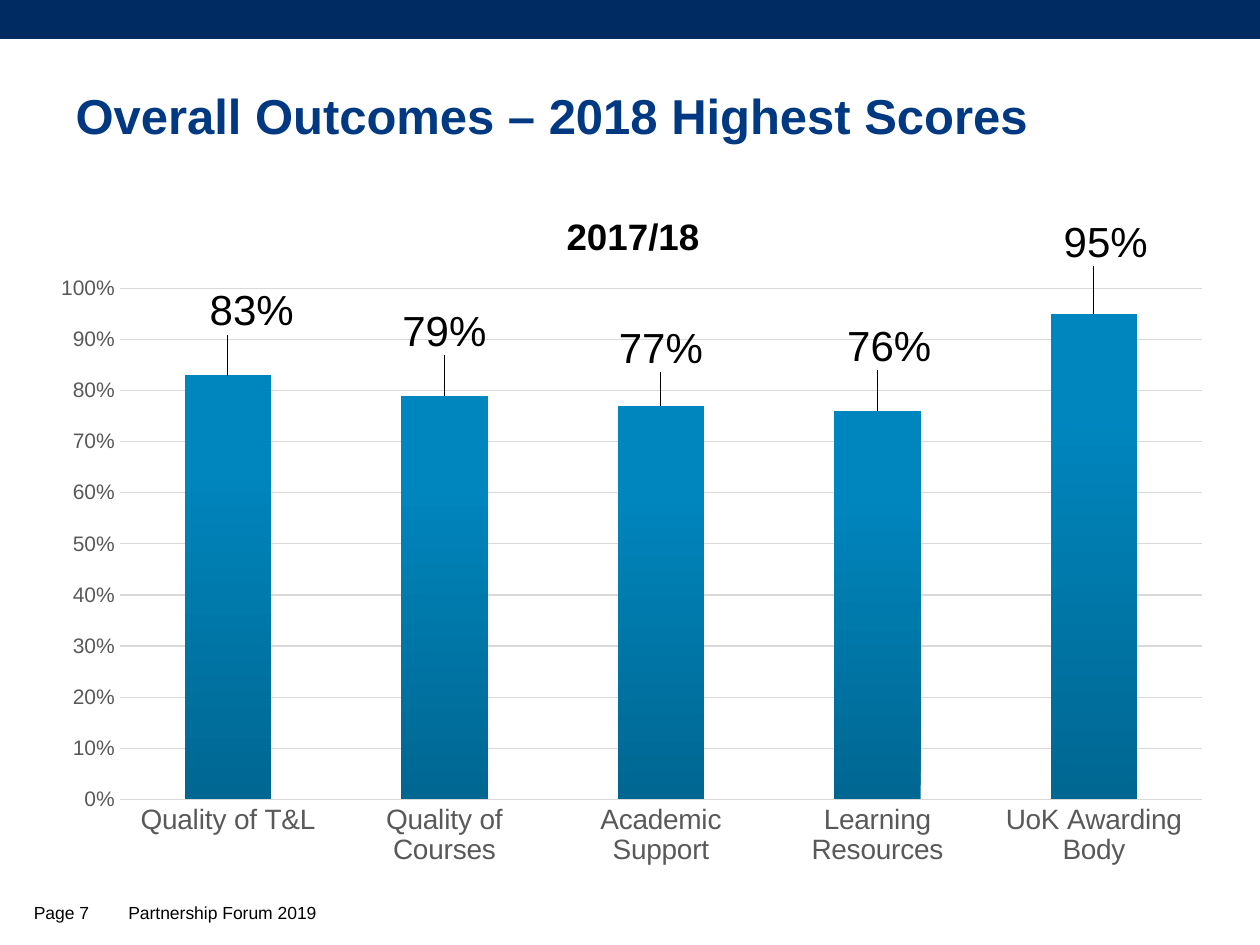
from typing import NamedTuple

from pptx import Presentation
from pptx.chart.data import CategoryChartData
from pptx.dml.color import RGBColor
from pptx.enum import chart as ch, shapes, text
from pptx.oxml import parse_xml
from pptx.oxml.ns import nsdecls
from pptx.util import Inches, Pt

NAVY = RGBColor(0x00, 0x2A, 0x62)
BLUE = RGBColor(0x00, 0x38, 0x82)
DEEP = RGBColor(0x00, 0x67, 0x92)
SKY = RGBColor(0x00, 0x86, 0xBE)
GRAY = RGBColor(0x59, 0x59, 0x59)
PALE = RGBColor(0xD9, 0xD9, 0xD9)
BLACK = RGBColor(0, 0, 0)
FACE = "Arial"


class Score(NamedTuple):
    name: str
    value: float
    dx: float  # label shift, as a share of the chart's width
    dy: float  # label shift, as a share of the chart's height


class Note(NamedTuple):
    words: str
    left: float
    top: float
    width: float
    height: float
    anchor: text.MSO_ANCHOR


SCORES = [
    Score("Quality of T&L", 0.83, 0.02, -0.05),
    Score("Quality of Courses", 0.79, 0, -0.05),
    Score("Academic Support", 0.77, 0, -0.04),
    Score("Learning Resources", 0.76, 0.01, -0.05),
    Score("UoK Awarding Body", 0.95, 0.01, -0.06),
]
NOTES = [
    Note("Partnership Forum 2019", 0.92, 7.11, 6.62, 0.3, text.MSO_ANCHOR.TOP),
    Note("Page 7", 0.17, 7.1, 0.74, 0.29, text.MSO_ANCHOR.MIDDLE),
]


def style(font, size: float, color: RGBColor, bold: bool = False) -> None:
    font.name = FACE
    font.size = Pt(size)
    font.bold = bold
    font.color.rgb = color


def layout(**parts):
    """Make a manual chart layout from its named parts."""
    body = "".join(f'<c:{key} val="{val}"/>' for key, val in parts.items())
    return parse_xml(f'<c:layout {nsdecls("c")}><c:manualLayout>{body}'
                     "</c:manualLayout></c:layout>")


def add_band(slide) -> None:
    band = slide.shapes.add_shape(shapes.MSO_SHAPE.RECTANGLE, 0, 0,
                                  Inches(10), Inches(0.31))
    band.shadow.inherit = False
    band.fill.solid()
    band.fill.fore_color.rgb = NAVY
    band.line.fill.background()


def add_title(slide) -> None:
    title = slide.shapes.title
    title.left, title.top = Inches(0.5), Inches(0.6)
    title.width, title.height = Inches(9.07), Inches(0.63)
    frame = title.text_frame
    frame.vertical_anchor = text.MSO_ANCHOR.MIDDLE
    para = frame.paragraphs[0]
    para.alignment = text.PP_ALIGN.LEFT
    run = para.add_run()
    run.text = "Overall Outcomes – 2018 Highest Scores"
    style(run.font, 28, BLUE, True)


def add_note(slide, note: Note) -> None:
    box = slide.shapes.add_textbox(Inches(note.left), Inches(note.top),
                                   Inches(note.width), Inches(note.height))
    frame = box.text_frame
    frame.word_wrap = True
    frame.vertical_anchor = note.anchor
    run = frame.paragraphs[0].add_run()
    run.text = note.words
    style(run.font, 10, BLACK)


def style_axes(chart) -> None:
    cat, val = chart.category_axis, chart.value_axis
    for axis, size in ((cat, 16), (val, 12)):
        axis.major_tick_mark = axis.minor_tick_mark = ch.XL_TICK_MARK.NONE
        style(axis.tick_labels.font, size, GRAY)
    cat.format.line.color.rgb = PALE
    cat.format.line.width = Pt(1)
    val.format.line.fill.background()
    val.minimum_scale, val.maximum_scale, val.major_unit = 0, 1, 0.1
    val.tick_labels.number_format = "0%"
    val.tick_labels.number_format_is_linked = False
    grid = val.major_gridlines.format.line
    grid.color.rgb = PALE
    grid.width = Pt(0.75)


def style_bars(plot) -> None:
    plot.gap_width = 150
    plot.vary_by_categories = False
    bars = plot.series[0]
    fill = bars.format.fill
    fill.gradient()
    fill.gradient_angle = 90
    for stop, color, place in zip(fill.gradient_stops, (DEEP, SKY), (0, 0.8)):
        stop.color.rgb = color
        stop.position = place

    tags = bars.data_labels
    tags.show_value = True
    tags.number_format = "0%"
    tags.number_format_is_linked = False
    style(tags.font, 24, BLACK)
    for i in range(len(SCORES)):
        tag = bars.points[i].data_label
        style(tag.font, 24, BLACK)
        tag.position = ch.XL_LABEL_POSITION.OUTSIDE_END


def add_scores(slide) -> None:
    data = CategoryChartData(number_format="0%")
    data.categories = [score.name for score in SCORES]
    data.add_series("Series 1", [score.value for score in SCORES])
    chart = slide.shapes.add_chart(
        ch.XL_CHART_TYPE.COLUMN_CLUSTERED, Inches(0.29), Inches(1.42),
        Inches(9.44), Inches(5.56), data).chart
    style(chart.font, 10, BLACK)
    chart.has_legend = False
    style_axes(chart)
    style_bars(chart.plots[0])

    run = chart.chart_title.text_frame.paragraphs[0].add_run()
    run.text = "2017/18"
    style(run.font, 21, BLACK, True)
    chart.chart_title.include_in_layout = False

    root = chart._chartSpace
    for old in root.xpath("c:chart/c:title/c:layout | c:chart/c:plotArea/c:layout"):
        old.getparent().remove(old)
    root.xpath("c:chart/c:title/c:tx")[0].addnext(
        layout(xMode="edge", yMode="edge", x=0.44, y=0.04))
    root.xpath("c:chart/c:plotArea")[0].insert(0, layout(
        layoutTarget="inner", xMode="edge", yMode="edge",
        x=0.07, y=0.156, w=0.91, h=0.73))
    for score, index in zip(SCORES, root.xpath(".//c:dLbl/c:idx")):
        index.addnext(layout(x=score.dx, y=score.dy))


def main() -> None:
    deck = Presentation()
    deck.slide_width, deck.slide_height = Inches(10), Inches(7.5)
    slide = deck.slides.add_slide(deck.slide_layouts[5])
    add_band(slide)
    add_title(slide)
    add_scores(slide)
    for note in NOTES:
        add_note(slide, note)
    deck.save("out.pptx")


if __name__ == "__main__":
    main()
